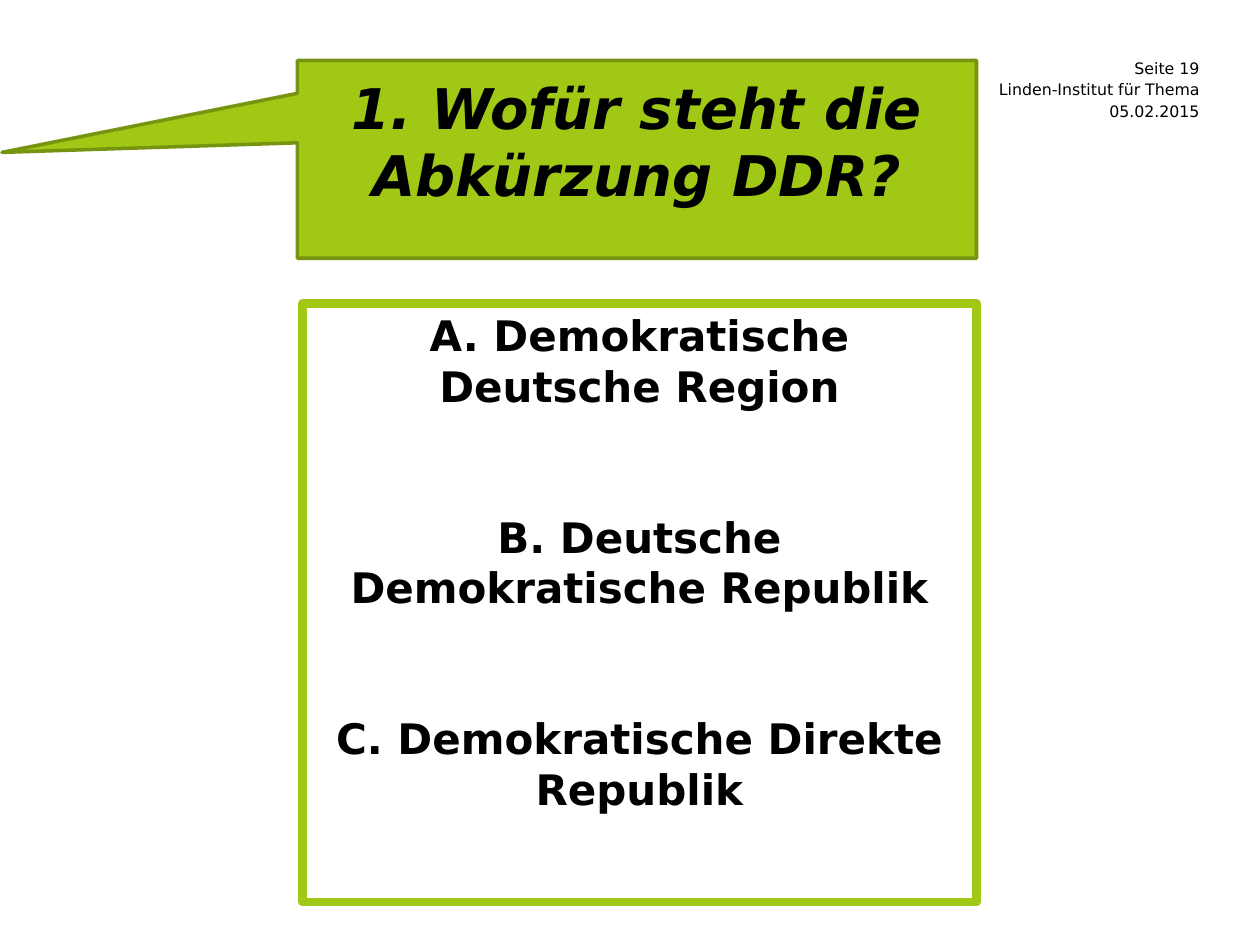
from dataclasses import dataclass

from pptx import Presentation
from pptx.dml.color import RGBColor
from pptx.enum.shapes import MSO_SHAPE as Shape
from pptx.enum.text import MSO_ANCHOR as Anchor, PP_ALIGN as Align
from pptx.util import Inches, Pt


@dataclass(frozen=True)
class Theme:
    """Colours and type sizes of the quiz slide."""
    font: str = "DejaVu Sans"
    text: RGBColor = RGBColor(0x00, 0x00, 0x00)
    green: RGBColor = RGBColor(0xA0, 0xC8, 0x14)
    dark_green: RGBColor = RGBColor(0x76, 0x94, 0x0F)
    question_size: Pt = Pt(32)
    answer_size: Pt = Pt(24)
    answer_gap: Pt = Pt(57.5)
    info_size: Pt = Pt(9)


THEME = Theme()


def add_run(paragraph, text, size, align, bold=False, italic=False):
    """Add one styled run to an aligned paragraph."""
    paragraph.alignment = align
    run = paragraph.add_run()
    run.text = text
    font = run.font
    font.name, font.size = THEME.font, size
    font.bold, font.italic = bold, italic
    font.color.rgb = THEME.text


def add_box(slide, kind, left, top, width, height, line_color, line_width):
    """Add an outlined preset shape without fill or shadow."""
    shape = slide.shapes.add_shape(
        kind, Inches(left), Inches(top), Inches(width), Inches(height))
    shape.shadow.inherit = False
    shape.fill.background()
    shape.line.color.rgb = line_color
    shape.line.width = Pt(line_width)
    shape.text_frame.word_wrap = True
    return shape


def add_page_info(slide, lines):
    """Stack right-aligned page details at the upper right."""
    for index, text in enumerate(lines):
        box = slide.shapes.add_textbox(
            Inches(7.32), Inches(0.46 + 0.17 * index), Inches(2.2), Inches(0.16))
        frame = box.text_frame
        frame.margin_left = frame.margin_right = 0
        frame.margin_top = frame.margin_bottom = 0
        frame.vertical_anchor = Anchor.MIDDLE
        frame.word_wrap = False
        add_run(frame.paragraphs[0], text, THEME.info_size, Align.RIGHT)


def add_question(slide, text):
    """Add the speech callout holding the question."""
    callout = add_box(slide, Shape.RECTANGULAR_CALLOUT, 2.36, 0.48, 5.39, 1.57,
                      THEME.dark_green, 2)
    callout.adjustments[0] = -0.935
    callout.adjustments[1] = -0.035
    callout.fill.solid()
    callout.fill.fore_color.rgb = THEME.green
    frame = callout.text_frame
    frame.vertical_anchor = Anchor.MIDDLE
    frame.margin_bottom = Inches(0.35)
    add_run(frame.paragraphs[0], text, THEME.question_size, Align.CENTER,
            bold=True, italic=True)


def add_answers(slide, answers):
    """Add the framed list of possible answers."""
    box = add_box(slide, Shape.RECTANGLE, 2.4, 2.41, 5.35, 4.75, THEME.green, 5)
    frame = box.text_frame
    frame.vertical_anchor = Anchor.TOP
    for index, text in enumerate(answers):
        paragraph = frame.add_paragraph() if index else frame.paragraphs[0]
        if index:
            paragraph.space_before = THEME.answer_gap
        add_run(paragraph, text, THEME.answer_size, Align.CENTER, bold=True)


def main():
    """Build and save the quiz slide."""
    presentation = Presentation()
    presentation.slide_width = Inches(10)
    presentation.slide_height = Inches(7.5)
    slide = presentation.slides.add_slide(presentation.slide_layouts[6])
    add_page_info(slide, ["Seite 19", "Linden-Institut für Thema", "05.02.2015"])
    add_question(slide, "1. Wofür steht die Abkürzung DDR?")
    add_answers(slide, [
        "A. Demokratische Deutsche Region",
        "B. Deutsche Demokratische Republik",
        "C. Demokratische Direkte Republik",
    ])
    presentation.save("out.pptx")


if __name__ == "__main__":
    main()
